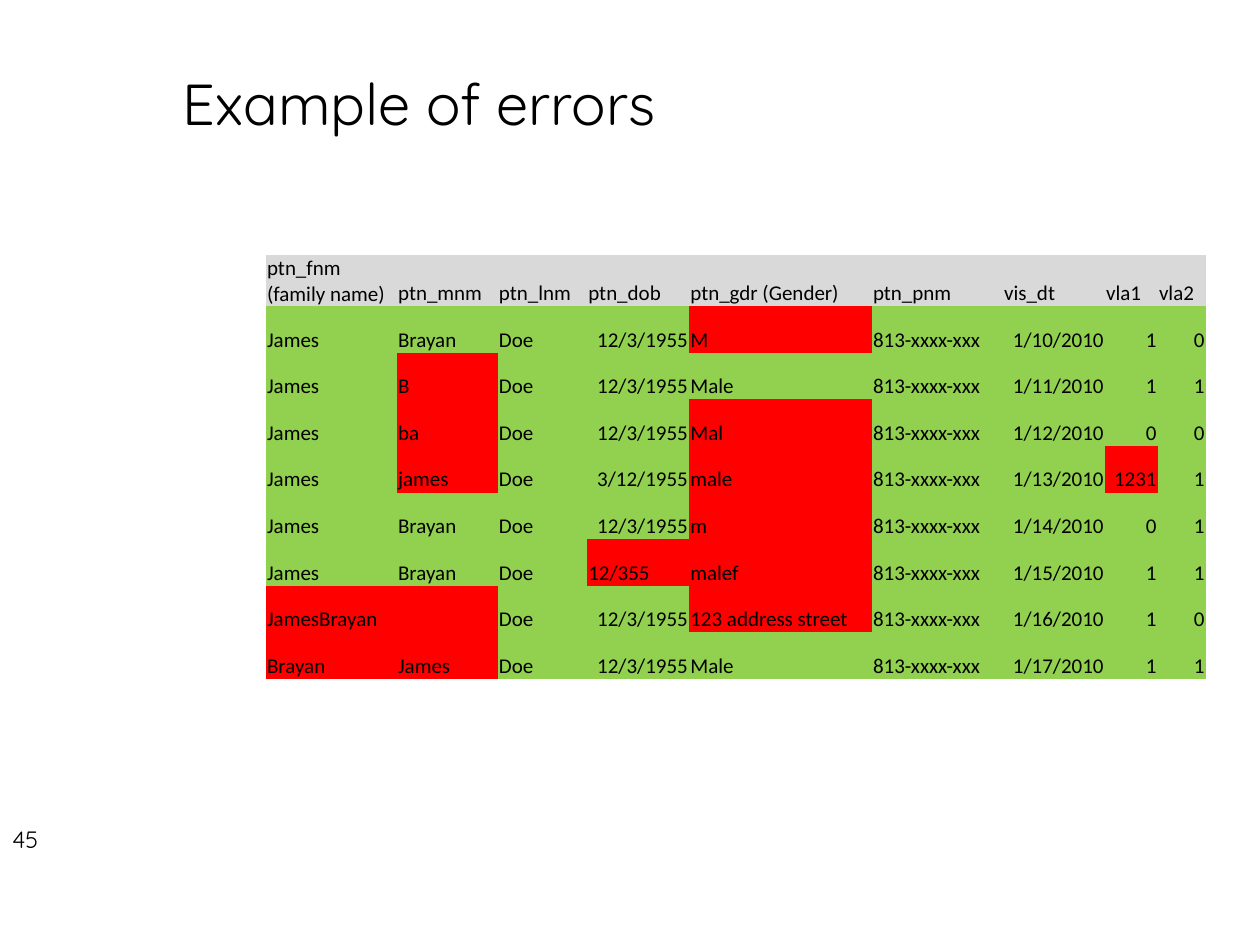
"""Build a slide with a table of patient records whose faulty cells are red."""
from pptx import Presentation
from pptx.dml.color import RGBColor
from pptx.enum.text import MSO_ANCHOR as Anchor, PP_ALIGN as Align
from pptx.oxml.ns import qn
from pptx.util import Inches, Pt

BLACK = RGBColor(0x00, 0x00, 0x00)
GRAY = RGBColor(0xD9, 0xD9, 0xD9)
GREEN = RGBColor(0x92, 0xD0, 0x50)
RED = RGBColor(0xFF, 0x00, 0x00)
NO_STYLE = "{2D5ABB26-0587-4C30-8999-92F81FD0307C}"

TITLE = "Example of errors"
PAGE = "45"
HEAD = ["ptn_fnm (family name)", "ptn_mnm", "ptn_lnm", "ptn_dob",
        "ptn_gdr (Gender)", "ptn_pnm", "vis_dt", "vla1", "vla2"]
PHONE = "813-xxxx-xxx"
ROWS = [
    ["James", "Brayan", "Doe", "12/3/1955", "M", PHONE, "1/10/2010", "1", "0"],
    ["James", "B", "Doe", "12/3/1955", "Male", PHONE, "1/11/2010", "1", "1"],
    ["James", "ba", "Doe", "12/3/1955", "Mal", PHONE, "1/12/2010", "0", "0"],
    ["James", "james", "Doe", "3/12/1955", "male", PHONE, "1/13/2010", "1231", "1"],
    ["James", "Brayan", "Doe", "12/3/1955", "m", PHONE, "1/14/2010", "0", "1"],
    ["James", "Brayan", "Doe", "12/355", "malef", PHONE, "1/15/2010", "1", "1"],
    ["JamesBrayan", "", "Doe", "12/3/1955", "123 address street", PHONE,
     "1/16/2010", "1", "0"],
    ["Brayan", "James", "Doe", "12/3/1955", "Male", PHONE, "1/17/2010", "1", "1"],
]
ERRORS = {1: [4], 2: [1], 3: [1, 4], 4: [1, 4, 7], 5: [4], 6: [3, 4],
          7: [0, 1, 4], 8: [0, 1]}
RIGHT = [3, 6, 7, 8]
BAD_DATE = "12/355"
WIDTHS = [1.04, 0.8, 0.71, 0.81, 1.45, 1.04, 0.81, 0.42, 0.38]
HIGH = 0.37


def write(frame, text, font, size, align=Align.LEFT):
    frame.text = text
    para = frame.paragraphs[0]
    para.alignment = align
    for run in para.runs:
        run.font.name = font
        run.font.size = Pt(size)
        run.font.color.rgb = BLACK
    return para


def fill_cell(cell, text, row, col):
    cell.vertical_anchor = Anchor.BOTTOM
    cell.margin_left = cell.margin_top = cell.margin_right = Inches(0.01)
    cell.margin_bottom = 0
    right = row > 0 and col in RIGHT and text != BAD_DATE
    write(cell.text_frame, text, "Calibri", 12, Align.RIGHT if right else Align.LEFT)
    body = RED if col in ERRORS.get(row, []) else GREEN
    cell.fill.solid()
    cell.fill.fore_color.rgb = body if row else GRAY


def add_grid(slide):
    data = [HEAD] + ROWS
    frame = slide.shapes.add_table(
        len(data), len(HEAD), Inches(2.11), Inches(2.02),
        Inches(sum(WIDTHS)), Inches(HIGH * len(data)))
    grid = frame.table
    grid._tbl.tblPr.find(qn("a:tableStyleId")).text = NO_STYLE
    grid.first_row = grid.horz_banding = False
    for column, wide in zip(grid.columns, WIDTHS):
        column.width = Inches(wide)
    for row, texts in enumerate(data):
        grid.rows[row].height = Inches(HIGH)
        for col, text in enumerate(texts):
            fill_cell(grid.cell(row, col), text, row, col)


def main():
    deck = Presentation()
    deck.slide_width, deck.slide_height = Inches(10), Inches(7.5)
    slide = deck.slides.add_slide(deck.slide_layouts[5])
    title = slide.shapes.title
    title.left, title.top = Inches(1.35), Inches(0.55)
    title.width, title.height = Inches(9.17), Inches(0.75)
    title.text_frame.vertical_anchor = Anchor.TOP
    write(title.text_frame, TITLE, "Quicksand", 33).line_spacing = 0.9
    page = slide.shapes.add_textbox(0, Inches(6.5), Inches(2.33), Inches(0.52))
    page.text_frame.word_wrap = True
    write(page.text_frame, PAGE, "Quicksand", 13.5)
    add_grid(slide)
    deck.save("out.pptx")


if __name__ == "__main__":
    main()
